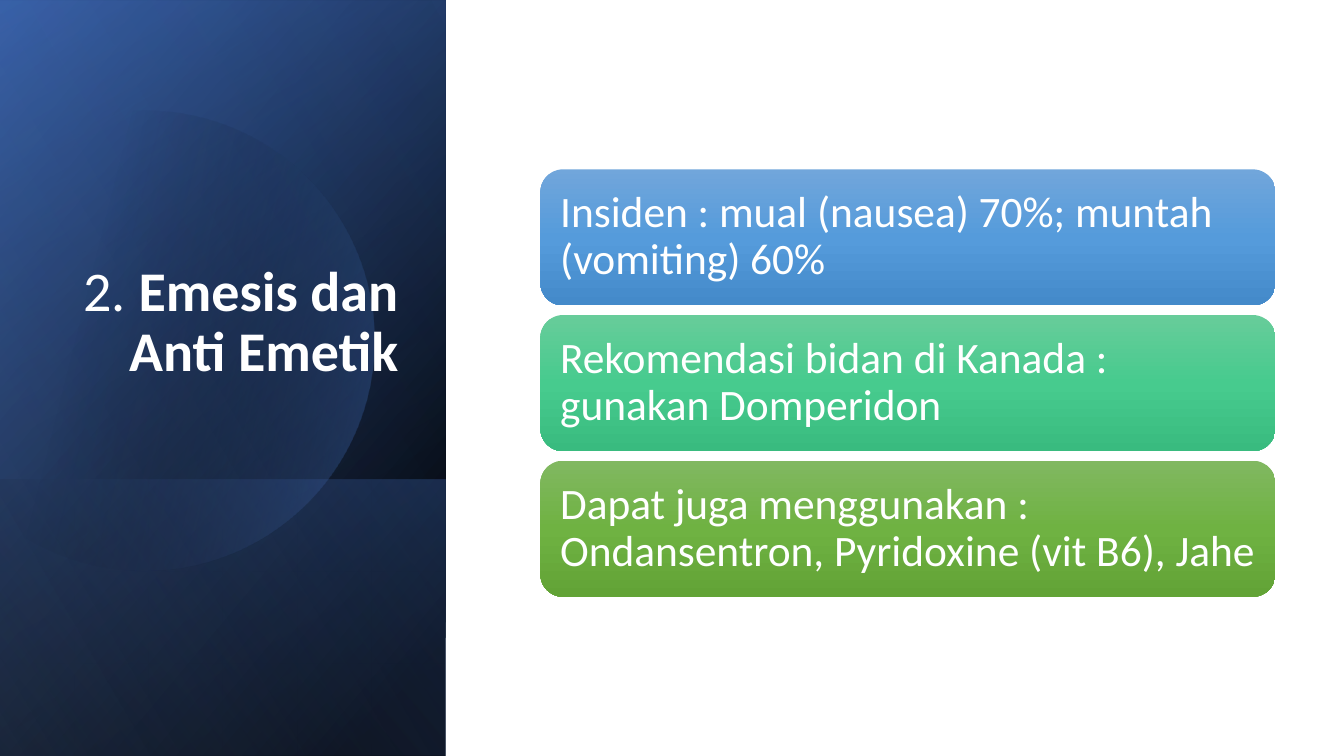
from math import acos, cos, pi, sin

from pptx import Presentation
from pptx.dml.color import RGBColor
from pptx.enum.shapes import MSO_SHAPE
from pptx.enum.text import MSO_ANCHOR, PP_ALIGN
from pptx.oxml import parse_xml
from pptx.oxml.ns import nsdecls, qn
from pptx.util import Inches, Pt

FONT = "Calibri"
WHITE = "FFFFFF"

# Left, top, width, height, gradient angle, stops (position, colour, opacity)
PANELS = [
    (-1.54, 1.54, 7.5, 4.42, 50, [(8, "000000", 100), (100, "2F5597", 100)]),
    (-1.54, 1.55, 7.5, 4.42, 30, [(0, "000000", 0), (99, "4472C4", 46)]),
    (0.84, 3.92, 2.74, 4.42, 130, [(2, "4472C4", 29), (100, "000000", 30)]),
]
SHEEN = (-1.54, 1.54, 7.5, 4.42, 120, [(0, "000000", 0), (99, "8FAADC", 11)])

CARDS = [
    ("Insiden : mual (nausea) 70%; muntah (vomiting) 60%",
     ("71A6DB", "559BDB", "448ACA")),
    ("Rekomendasi bidan di Kanada : gunakan Domperidon",
     ("67CC9A", "47CB8E", "39BB7F")),
    ("Dapat juga menggunakan : Ondansentron, Pyridoxine (vit B6), Jahe",
     ("81B861", "6FB242", "62A336")),
]


def colour(value):
    return RGBColor.from_string(value)


def fill_gradient(shape, angle, stops):
    """Give the shape a linear gradient, without line or shadow."""
    shape.shadow.inherit = False
    shape.line.fill.background()
    shape.fill.background()
    stop_xml = "".join(
        f'<a:gs pos="{position * 1000}"><a:srgbClr val="{value}">'
        f'<a:alpha val="{opacity * 1000}"/></a:srgbClr></a:gs>'
        for position, value, opacity in stops)
    gradient = parse_xml(
        f'<a:gradFill {nsdecls("a")} rotWithShape="1"><a:gsLst>{stop_xml}</a:gsLst>'
        f'<a:lin ang="{angle * 60000}" scaled="0"/></a:gradFill>')
    properties = shape._element.spPr
    properties.replace(properties.find(qn("a:noFill")), gradient)


def format_run(run, size, bold=False):
    run.font.name = FONT
    run.font.size = Pt(size)
    run.font.bold = bold
    run.font.color.rgb = colour(WHITE)


def add_panel(slide, left, top, width, height, angle, stops):
    """Add a rectangle that is mirrored and turned a quarter."""
    panel = slide.shapes.add_shape(
        MSO_SHAPE.RECTANGLE, Inches(left), Inches(top), Inches(width), Inches(height))
    fill_gradient(panel, angle, stops)
    panel.rotation = 90
    panel._element.spPr.find(qn("a:xfrm")).set("flipH", "1")


def add_cut_circle(slide, center_x, center_y, radius, cut_x, angle, stops):
    """Add a circle whose left side is cut off at cut_x."""
    limit = acos((cut_x - center_x) / radius)
    steps = 120
    angles = [limit * (2 * step / steps - 1) for step in range(steps + 1)]
    points = [(Inches(center_x + radius * cos(turn)),
               Inches(center_y + radius * sin(turn))) for turn in angles]
    builder = slide.shapes.build_freeform(*points[0])
    builder.add_line_segments(points[1:], close=True)
    fill_gradient(builder.convert_to_shape(), angle, stops)


def set_title(slide):
    title = slide.shapes.title
    title.left, title.top = Inches(0.64), Inches(1.84)
    title.width, title.height = Inches(3.41), Inches(2.62)
    frame = title.text_frame
    frame.word_wrap = True
    frame.vertical_anchor = MSO_ANCHOR.BOTTOM
    frame.margin_bottom = Inches(0.65)
    paragraph = frame.paragraphs[0]
    paragraph.alignment = PP_ALIGN.RIGHT
    paragraph.line_spacing = 0.9
    for text, bold in (("2. ", False), ("Emesis dan Anti Emetik", True)):
        run = paragraph.add_run()
        run.text = text
        format_run(run, 40, bold)
    # Bring the title in front of the panels
    slide.shapes._spTree.append(title._element)


def add_card(slide, top, text, colours):
    card = slide.shapes.add_shape(
        MSO_SHAPE.ROUNDED_RECTANGLE, Inches(5.36), Inches(top), Inches(7.29), Inches(1.35))
    fill_gradient(card, 90, [(50 * i, value, 100) for i, value in enumerate(colours)])
    frame = card.text_frame
    frame.text = text
    frame.word_wrap = True
    frame.vertical_anchor = MSO_ANCHOR.MIDDLE
    frame.margin_left = frame.margin_right = Inches(0.13)
    frame.margin_top = frame.margin_bottom = Inches(0.13)
    paragraph = frame.paragraphs[0]
    paragraph.alignment = PP_ALIGN.LEFT
    paragraph.line_spacing = 0.9
    format_run(paragraph.runs[0], 31)


def main():
    presentation = Presentation()
    presentation.slide_width = Inches(13.33)
    presentation.slide_height = Inches(7.5)
    slide = presentation.slides.add_slide(presentation.slide_layouts[5])

    # Dark side panel with the circle
    for panel in PANELS:
        add_panel(slide, *panel)
    add_cut_circle(slide, 1.43, 3.38, 2.28, -0.15, 14,
                   [(29, "000000", 0), (100, "4472C4", 43)])
    add_panel(slide, *SHEEN)
    set_title(slide)

    # Cards
    for index, (text, colours) in enumerate(CARDS):
        add_card(slide, 1.68 + 1.445 * index, text, colours)

    presentation.save("out.pptx")


if __name__ == "__main__":
    main()
